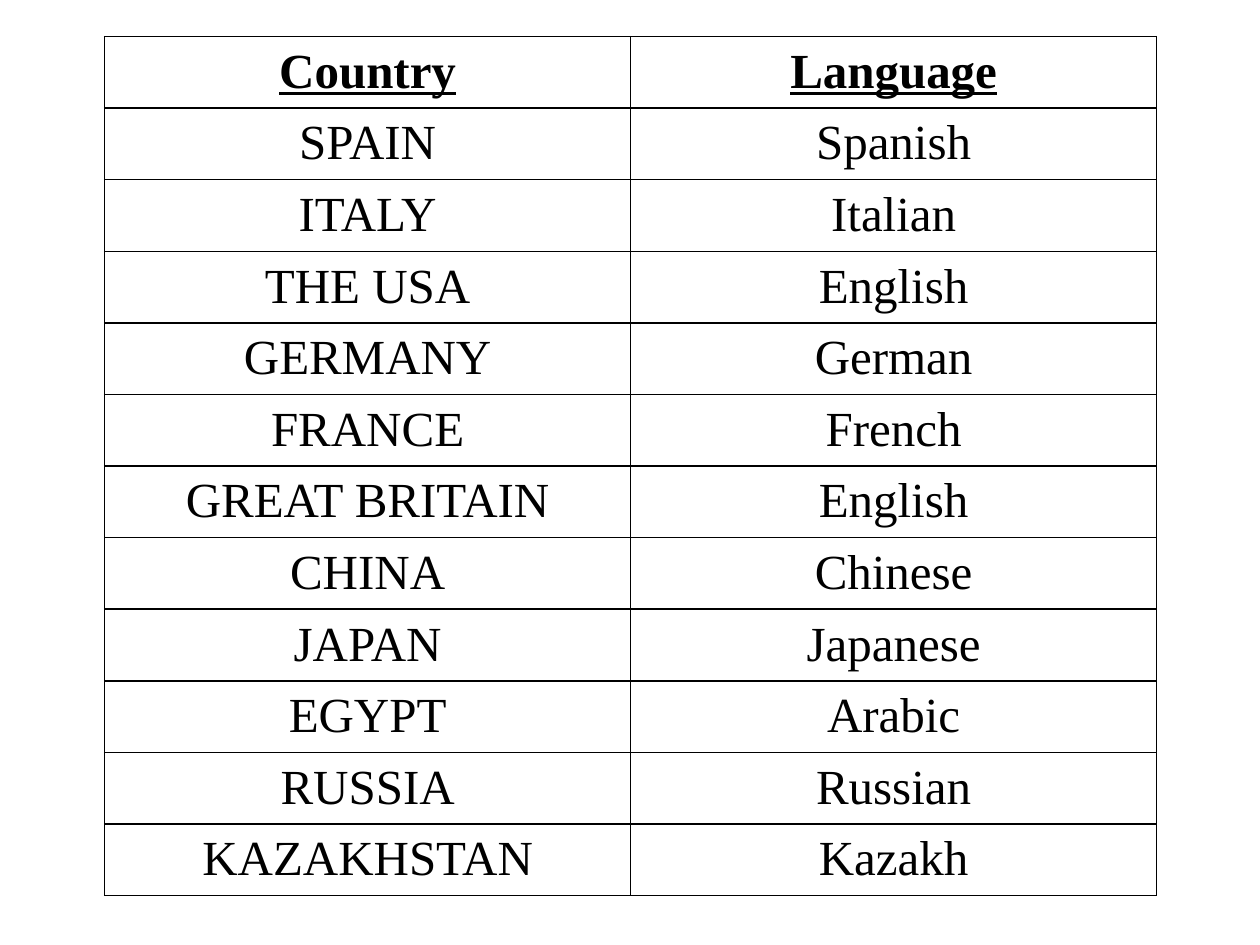
from dataclasses import dataclass

from lxml.etree import SubElement
from pptx import Presentation
from pptx.dml.color import RGBColor
from pptx.enum.text import PP_ALIGN
from pptx.oxml.ns import qn
from pptx.util import Inches, Pt


@dataclass(frozen=True)
class Theme:
    font: str = "Times New Roman"
    text_size: int = 28
    ink: str = "000000"
    border_width: float = 1
    line_spacing: float = 1.15
    side_margin: float = 0.07


ROWS = [
    ("Country", "Language"),
    ("SPAIN", "Spanish"),
    ("ITALY", "Italian"),
    ("THE USA", "English"),
    ("GERMANY", "German"),
    ("FRANCE", "French"),
    ("GREAT BRITAIN", "English"),
    ("CHINA", "Chinese"),
    ("JAPAN", "Japanese"),
    ("EGYPT", "Arabic"),
    ("RUSSIA", "Russian"),
    ("KAZAKHSTAN", "Kazakh"),
]


class SlideBuilder:
    def __init__(self, slide, theme):
        self.slide = slide
        self.theme = theme

    def table(self, rows, left, top, width, height):
        shape = self.slide.shapes.add_table(
            len(rows), len(rows[0]),
            Inches(left), Inches(top), Inches(width), Inches(height))
        table = shape.table
        table.first_row = False
        table.horz_banding = False
        for row_index, texts in enumerate(rows):
            for column_index, text in enumerate(texts):
                self.cell(table.cell(row_index, column_index), text,
                          heading=row_index == 0)

    def cell(self, cell, text, heading):
        theme = self.theme
        # Borders come before the fill in the cell properties
        self.borders(cell)
        cell.fill.background()
        cell.margin_left = cell.margin_right = Inches(theme.side_margin)
        cell.margin_top = cell.margin_bottom = 0

        # Text
        cell.text = text
        paragraph = cell.text_frame.paragraphs[0]
        paragraph.alignment = PP_ALIGN.CENTER
        paragraph.line_spacing = theme.line_spacing
        font = paragraph.font
        font.name = theme.font
        font.size = Pt(theme.text_size)
        font.bold = heading
        font.underline = heading
        font.color.rgb = RGBColor.from_string(theme.ink)

    def borders(self, cell):
        properties = cell._tc.get_or_add_tcPr()
        for side in ("a:lnL", "a:lnR", "a:lnT", "a:lnB"):
            line = SubElement(properties, qn(side),
                              w=str(Pt(self.theme.border_width)))
            fill = SubElement(line, qn("a:solidFill"))
            SubElement(fill, qn("a:srgbClr"), val=self.theme.ink)


def main():
    presentation = Presentation()
    presentation.slide_width = Inches(10)
    presentation.slide_height = Inches(7.5)
    slide = presentation.slides.add_slide(presentation.slide_layouts[6])

    # Countries and their languages
    builder = SlideBuilder(slide, Theme())
    builder.table(ROWS, left=0.83, top=0.29, width=8.35, height=6.82)

    presentation.save("out.pptx")


if __name__ == "__main__":
    main()
